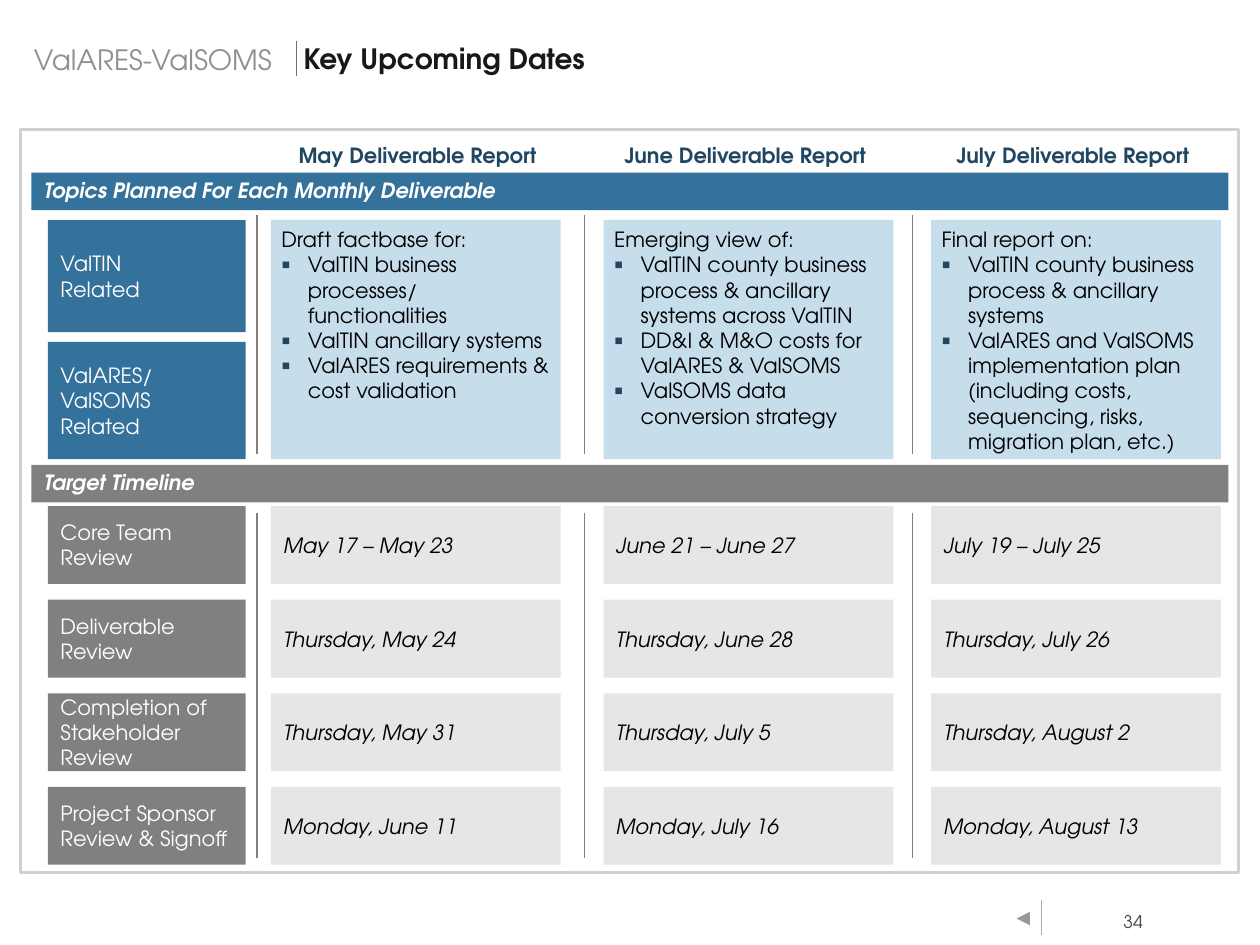
from lxml.etree import SubElement
from pptx import Presentation
from pptx.dml.color import RGBColor
from pptx.enum.shapes import MSO_CONNECTOR, MSO_SHAPE
from pptx.enum.text import MSO_ANCHOR, MSO_AUTO_SIZE, PP_ALIGN
from pptx.oxml.ns import qn
from pptx.util import Pt

COLORS = {
    "white": "FFFFFF", "black": "000000", "title": "181818", "project": "909090",
    "number": "464646", "frame": "D0D0D0", "rule": "767171", "footer": "AFABAB",
    "blue": "35729B", "navy": "204762", "sky": "C6DDEC",
    "gray": "808080", "pale": "E6E6E6",
}

PANEL_LEFTS = (154.8, 344.9, 532.1)
PANEL_WIDTH = 165.6
LABEL_LEFT, LABEL_WIDTH = 27.4, 113
COLUMN_STEP = 187.2
ROW_TOP, ROW_STEP, ROW_HEIGHT = 289.2, 53.5, 44.5
MONTHS = ("May", "June", "July")

TOPICS = (
    (1, "Draft factbase for:", (
        "ValTIN business processes/ functionalities",
        "ValTIN ancillary systems",
        "ValARES requirements & cost validation")),
    (2, "Emerging view of:", (
        "ValTIN county business process & ancillary systems across ValTIN",
        "DD&I & M&O costs for ValARES & ValSOMS",
        "ValSOMS data conversion strategy")),
    (4, "Final report on:", (
        "ValTIN county business process & ancillary systems",
        "ValARES and ValSOMS implementation plan (including costs, "
        "sequencing, risks, migration plan, etc.)")),
)

TIMELINE = (
    ("Core Team Review", ("May 17 – May 23", "June 21 – June 27", "July 19 – July 25")),
    ("Deliverable Review", ("Thursday, May 24", "Thursday, June 28", "Thursday, July 26")),
    ("Completion of Stakeholder Review",
     ("Thursday, May 31", "Thursday, July 5", "Thursday, August 2")),
    ("Project Sponsor Review & Signoff",
     ("Monday, June 11", "Monday, July 16", "Monday, August 13")),
)


class SlideBuilder:
    font_name = "TeX Gyre Adventor"

    def __init__(self, slide):
        self.slide = slide

    def color(self, name):
        return RGBColor.from_string(COLORS[name])

    def format_runs(self, paragraph, color, size=12, bold=False, italic=False):
        values = {"name": self.font_name, "size": Pt(size), "bold": bold, "italic": italic}
        for run in paragraph.runs:
            for attribute, value in values.items():
                setattr(run.font, attribute, value)
            run.font.color.rgb = self.color(color)

    def format_frame(self, frame, insets, anchor=MSO_ANCHOR.TOP, wrap=True):
        left, top, right, bottom = (Pt(inset) for inset in insets)
        values = {
            "margin_left": left, "margin_top": top, "margin_right": right,
            "margin_bottom": bottom, "vertical_anchor": anchor,
            "word_wrap": wrap, "auto_size": MSO_AUTO_SIZE.NONE,
        }
        for attribute, value in values.items():
            setattr(frame, attribute, value)

    def fill_text(self, shape, text, color, insets=(7.2, 3.6, 7.2, 3.6),
                  anchor=MSO_ANCHOR.TOP, align=PP_ALIGN.LEFT, wrap=True, **font):
        self.format_frame(shape.text_frame, insets, anchor, wrap)
        shape.text_frame.text = text
        paragraph = shape.text_frame.paragraphs[0]
        paragraph.alignment = align
        self.format_runs(paragraph, color, **font)

    def shape(self, box, fill=None, line=None, kind=MSO_SHAPE.RECTANGLE):
        shape = self.slide.shapes.add_shape(kind, *map(Pt, box))
        shape.shadow.inherit = False
        if fill:
            shape.fill.solid()
            shape.fill.fore_color.rgb = self.color(fill)
        else:
            shape.fill.background()
        if line:
            shape.line.color.rgb = self.color(line)
            shape.line.width = Pt(1.5)
        else:
            shape.line.fill.background()
        return shape

    def cell(self, box, fill, text, color, **font):
        self.fill_text(self.shape(box, fill), text, color, insets=(7.2,) * 4,
                       anchor=MSO_ANCHOR.MIDDLE, **font)

    def text(self, box, text, color, **options):
        self.fill_text(self.slide.shapes.add_textbox(*map(Pt, box)), text, color, **options)

    def banner(self, top, text, fill):
        self.shape((18, top, 684, 21.4), fill)
        self.text((18, top - 0.7, 684, 21.4), text, "white", bold=True, italic=True)

    def header(self, box, text):
        shape = self.shape(box, kind=MSO_SHAPE.LEFT_RIGHT_ARROW)
        shape.adjustments[0], shape.adjustments[1] = 1, 0
        self.fill_text(shape, text, "navy", insets=(0, 0, 0, 1.4),
                       anchor=MSO_ANCHOR.BOTTOM, align=PP_ALIGN.CENTER, bold=True)

    def vertical_line(self, x, top, bottom, color, width):
        line = self.slide.shapes.add_connector(
            MSO_CONNECTOR.STRAIGHT, Pt(x), Pt(top), Pt(x), Pt(bottom))
        line.line.color.rgb = self.color(color)
        line.line.width = Pt(width)
        SubElement(line.element.spPr, qn("a:effectLst"))

    def placeholder(self, index, box):
        shape = next(item for item in self.slide.placeholders
                     if item.placeholder_format.idx == index)
        for attribute, value in zip(("left", "top", "width", "height"), box):
            setattr(shape, attribute, Pt(value))
        self.slide.shapes.element.append(shape.element)
        return shape

    def title(self, box, text):
        shape = self.placeholder(0, box)
        self.fill_text(shape, text, "title", insets=(0, 3.6, 0, 3.6),
                       anchor=MSO_ANCHOR.MIDDLE, size=16, bold=True)
        shape.text_frame.paragraphs[0].line_spacing = 0.9

    def topic_list(self, index, box, intro, items):
        frame = self.placeholder(index, box).text_frame
        self.format_frame(frame, (0, 0, 0, 0))
        for position, text in enumerate((intro, *items)):
            paragraph = frame.paragraphs[0] if position == 0 else frame.add_paragraph()
            paragraph.text = text
            paragraph.alignment = PP_ALIGN.LEFT
            paragraph.space_before = Pt(0)
            paragraph.level = 1 if position else 0
            self.format_runs(paragraph, "black")
            self.bullet(paragraph, 15.1 if position else 0)

    def bullet(self, paragraph, indent):
        properties = paragraph._p.get_or_add_pPr()
        properties.set("marL", str(Pt(indent)))
        properties.set("indent", str(-Pt(indent)))
        if not indent:
            SubElement(properties, qn("a:buNone"))
            return
        bullet_color = SubElement(properties, qn("a:buClr"))
        SubElement(bullet_color, qn("a:srgbClr"), val=COLORS["navy"])
        SubElement(properties, qn("a:buSzPct"), val="125000")
        SubElement(properties, qn("a:buChar"), char="▪")


def main():
    presentation = Presentation()
    presentation.slide_width, presentation.slide_height = Pt(720), Pt(540)
    slide = presentation.slides.add_slide(presentation.slide_layouts[4])
    builder = SlideBuilder(slide)

    builder.text((635.8, 517.5, 23, 17.3), "34", "number", insets=(5.8, 2.9, 5.8, 2.9),
                 align=PP_ALIGN.RIGHT, wrap=False, size=10)
    back_button = builder.shape((579.6, 518.4, 10.1, 13), "white",
                                kind=MSO_SHAPE.ACTION_BUTTON_FORWARD_OR_NEXT)
    back_button.rotation = 180
    builder.vertical_line(594.9, 514.1, 534.2, "footer", 0.5)
    builder.text((19.4, 20.5, 151, 26.6), "ValARES-ValSOMS", "project",
                 insets=(0, 3.6, 0, 3.6), anchor=MSO_ANCHOR.MIDDLE, size=16)
    builder.vertical_line(169.3, 23.2, 43.2, "rule", 0.5)
    builder.title((173.5, 21.4, 520.6, 26.6), "Key Upcoming Dates")

    builder.shape((11.6, 73.9, 696.2, 424.8), "white", line="frame")
    builder.banner(98.7, "Topics Planned For Each Monthly Deliverable", "blue")
    builder.banner(265.7, "Target Timeline", "gray")
    builder.cell((LABEL_LEFT, 125.8, LABEL_WIDTH, 64), "blue", "ValTIN\vRelated", "white")
    builder.cell((LABEL_LEFT, 195.4, LABEL_WIDTH, 67), "blue",
                 "ValARES/ ValSOMS Related", "white")

    for column, (month, left, topic) in enumerate(zip(MONTHS, PANEL_LEFTS, TOPICS)):
        offset = column * COLUMN_STEP
        builder.header((151.2 + offset, 81.4, 175, 15.8), f"{month} Deliverable Report")
        for top, bottom in ((123.1, 259.2), (293, 490.3)):
            builder.vertical_line(146.9 + offset, top, bottom, "gray", 0.75)
        builder.shape((left, 125.6, PANEL_WIDTH, 136.8), "sky")
        index, intro, items = topic
        builder.topic_list(index, (left + 6, 129.6, 153.4, 131), intro, items)

    for row, (label, dates) in enumerate(TIMELINE):
        top = ROW_TOP + row * ROW_STEP
        builder.cell((LABEL_LEFT, top, LABEL_WIDTH, ROW_HEIGHT), "gray", label, "white")
        for left, date in zip(PANEL_LEFTS, dates):
            builder.cell((left, top, PANEL_WIDTH, ROW_HEIGHT), "pale", date, "black", italic=True)

    for placeholder in list(slide.placeholders):
        if not placeholder.text_frame.text:
            slide.shapes.element.remove(placeholder.element)

    presentation.save("out.pptx")


if __name__ == "__main__":
    main()
